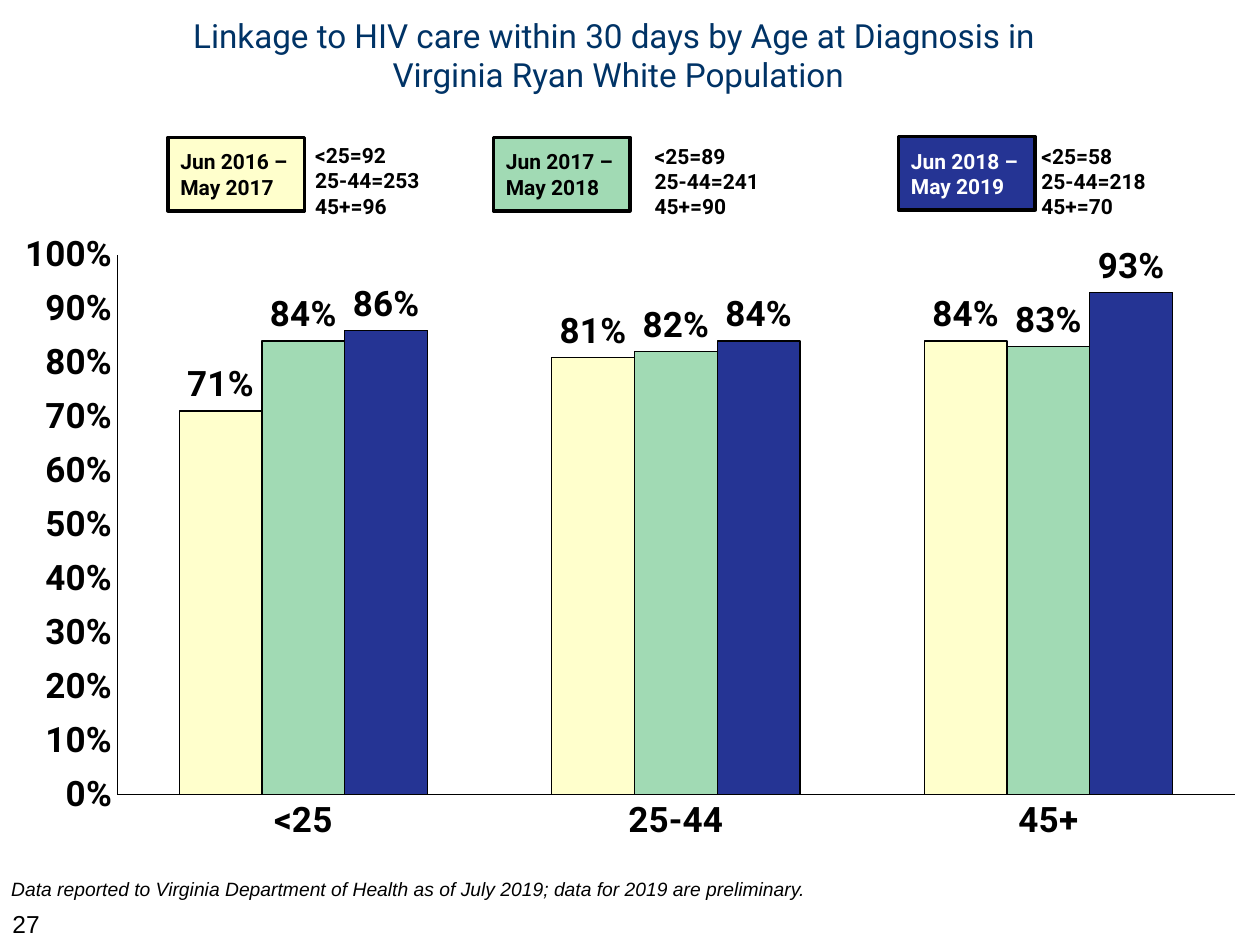
from lxml.etree import SubElement
from pptx import Presentation
from pptx.chart.data import CategoryChartData
from pptx.dml.color import RGBColor
from pptx.enum.chart import XL_CHART_TYPE as ChartType, XL_LABEL_POSITION as LabelPos, XL_TICK_MARK as Tick
from pptx.enum.shapes import MSO_SHAPE as Preset
from pptx.enum.text import MSO_ANCHOR as Anchor, MSO_AUTO_SIZE as AutoSize, PP_ALIGN as Align
from pptx.oxml.ns import qn
from pptx.util import Pt

COLORS = {
    "ink": "000000",
    "title": "003366",
    "white": "FFFFFF",
    "cream": "FFFFCC",
    "green": "A1DAB4",
    "navy": "253494",
}
AGES = ["<25", "25-44", "45+"]
PERIODS = [
    dict(label="Jun 2016 – May 2017", fill="cream", ink="ink", key=(96, 78.5),
         counts=(92, 253, 96), note=(173, 78, 104, 51), rates=(0.71, 0.81, 0.84)),
    dict(label="Jun 2017 – May 2018", fill="green", ink="ink", key=(282, 78.5),
         counts=(89, 241, 90), note=(367, 78.5, 131, 51), rates=(0.84, 0.82, 0.83)),
    dict(label="Jun 2018 – May 2019", fill="navy", ink="white", key=(513.5, 78),
         counts=(58, 218, 70), note=(588, 78.5, 132, 51), rates=(0.86, 0.84, 0.93)),
]


def rgb(name):
    return RGBColor.from_string(COLORS[name])


def style_font(font, size, face="Roboto", color="ink", bold=False, italic=False):
    font.size, font.name, font.bold, font.italic = Pt(size), face, bold, italic
    font.color.rgb = rgb(color)


def write(frame, text, align=Align.LEFT, anchor=Anchor.TOP, **style):
    frame.word_wrap = True
    frame.auto_size = AutoSize.NONE
    frame.vertical_anchor = anchor
    frame.text = text
    for paragraph in frame.paragraphs:
        paragraph.alignment = align
        for run in paragraph.runs:
            style_font(run.font, **style)


class Deck:
    def __init__(self):
        self.prs = Presentation()
        self.prs.slide_width, self.prs.slide_height = Pt(720), Pt(540)
        self.slide = self.prs.slides.add_slide(self.prs.slide_layouts[5])

    def title(self, text, left, top, width, height):
        heading = self.slide.shapes.title
        heading.left, heading.top = Pt(left), Pt(top)
        heading.width, heading.height = Pt(width), Pt(height)
        write(heading.text_frame, text, align=Align.CENTER, anchor=Anchor.MIDDLE,
              size=19, color="title")

    def text(self, text, box, **style):
        note = self.slide.shapes.add_textbox(*map(Pt, box))
        write(note.text_frame, text, **style)

    def key(self, text, box, fill, ink):
        swatch = self.slide.shapes.add_shape(Preset.RECTANGLE, *map(Pt, box))
        swatch.shadow.inherit = False
        self.paint(swatch, fill, 2)
        write(swatch.text_frame, text, anchor=Anchor.MIDDLE, size=12, color=ink, bold=True)

    def paint(self, target, fill, weight):
        target.fill.solid()
        target.fill.fore_color.rgb = rgb(fill)
        self.outline(target.line, weight)

    def outline(self, line, weight=0.75):
        line.color.rgb = rgb("ink")
        line.width = Pt(weight)

    def columns(self, box, categories, periods):
        rates = CategoryChartData(number_format="0%")
        rates.categories = categories
        for period in periods:
            rates.add_series(period["label"], period["rates"])
        chart = self.slide.shapes.add_chart(
            ChartType.COLUMN_CLUSTERED, *map(Pt, box), rates).chart
        chart.has_legend = chart.has_title = False
        style_font(chart.font, 20, bold=True)

        for axis in (chart.category_axis, chart.value_axis):
            axis.has_major_gridlines = False
            axis.major_tick_mark = axis.minor_tick_mark = Tick.NONE
            self.outline(axis.format.line)
        scale = chart.value_axis
        scale.minimum_scale, scale.maximum_scale, scale.major_unit = 0, 1, 0.1
        scale.tick_labels.number_format = "0%"
        scale.tick_labels.number_format_is_linked = False

        plot = chart.plots[0]
        plot.gap_width, plot.overlap, plot.vary_by_categories = 150, 0, False
        plot.has_data_labels = True
        labels = plot.data_labels
        labels.show_value = True
        labels.position = LabelPos.OUTSIDE_END
        labels.number_format, labels.number_format_is_linked = "0%", False
        for series, period in zip(plot.series, periods):
            series.invert_if_negative = False
            self.paint(series.format, period["fill"], 0.75)
        self.place_plot(chart, x=0.093, y=0.052, w=0.887, h=0.852)

    def place_plot(self, chart, **fractions):
        area = chart.plots[0]._element.getparent()
        layout = area.find(qn("c:layout"))
        if layout is None:
            layout = SubElement(area, qn("c:layout"))
            area.insert(0, layout)
        manual = SubElement(layout, qn("c:manualLayout"))
        settings = [("layoutTarget", "inner"), ("xMode", "edge"), ("yMode", "edge")]
        for tag, value in settings + list(fractions.items()):
            SubElement(manual, qn(f"c:{tag}")).set("val", str(value))


def main():
    deck = Deck()
    deck.title("Linkage to HIV care within 30 days by Age at Diagnosis in \v"
               "Virginia Ryan White Population", -13.5, -9.5, 733.5, 81.5)
    deck.columns((0, 126.7, 720, 362), AGES, PERIODS)
    for period in PERIODS:
        counts = "\n".join(f"{age}={n}" for age, n in zip(AGES, period["counts"]))
        deck.text(counts, period["note"], size=12, bold=True)
        deck.key(period["label"], (*period["key"], 78, 42), period["fill"], period["ink"])
    deck.text("Data reported to Virginia Department of Health as of July 2019; "
              "data for 2019 are preliminary.", (-0.7, 498, 672, 21),
              size=11, face="Arial", italic=True)
    deck.text("27", (0, 516, 168, 18), size=14, face="Arial")
    deck.prs.save("out.pptx")


if __name__ == "__main__":
    main()
